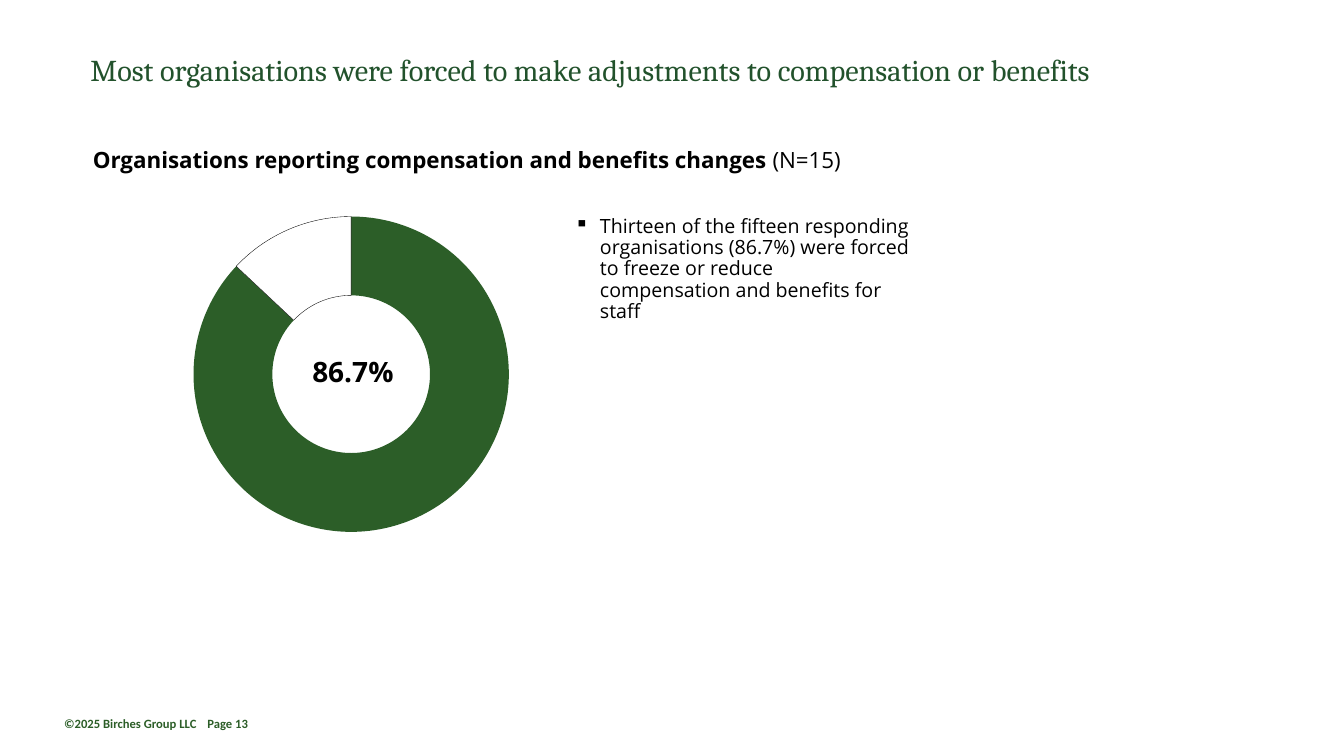
"""Build the slide on organisations that adjusted compensation or benefits."""
from lxml.etree import SubElement
from pptx import Presentation
from pptx.chart.data import CategoryChartData
from pptx.dml.color import RGBColor
from pptx.enum.chart import XL_CHART_TYPE as ChartType
from pptx.enum.text import MSO_ANCHOR as Anchor
from pptx.oxml.ns import qn
from pptx.util import Cm, Pt

GREEN, TITLE_GREEN, BLACK, WHITE = "2C5E28", "22522C", "000000", "FFFFFF"
SHARES = {"1": 87, "2": 13}
SLICES = (GREEN, WHITE)
RING = (4.65, 5.23, 8.41, 8.41)
PLOT = {"x": 0.027, "y": 0.027, "w": 0.945, "h": 0.945}
BULLET_INDENT = Cm(0.64)
PAGE_TAB = Cm(3.61)

FOOTER = {
    "at": (1.37, 17.91, 7.67, 0.64), "runs": [("©2025 Birches Group LLC\tPage 13", True)],
    "font": ("Calibri", 9, GREEN), "spacing": 1.0, "tab": PAGE_TAB,
}
TITLE = {
    "at": (2.03, 0.97, 29.21, 1.7), "font": ("Cambria", 21.6, TITLE_GREEN),
    "runs": [("Most organisations were forced to make adjustments to compensation or benefits", False)],
    "frame": {"vertical_anchor": Anchor.MIDDLE},
}
HEADING = {
    "at": (2.34, 3.76, 29.21, 0.53), "font": ("Open Sans", 16, BLACK), "margins": (0, 0, 0, 0),
    "runs": [("Organisations reporting compensation and benefits changes ", True), ("(N=15)", False)],
}
FINDING = {
    "at": (14.48, 5.46, 8.48, 4.01), "font": ("Open Sans", 14, BLACK), "margins": (0, 0, 0, 1.35),
    "runs": [("Thirteen of the fifteen responding organisations (86.7%) were forced to freeze or reduce", False),
             ("\n", False), ("compensation and benefits for staff", False)],
    "bullet": "▪",
}
SHARE_LABEL = {
    "at": (7.59, 9.04, 2.36, 0.76), "font": ("Open Sans", 20, BLACK), "margins": (0.28, 0, 0, 0),
    "runs": [("86.7%", True)], "frame": {"word_wrap": False},
}


def color(hex_code):
    return RGBColor.from_string(hex_code)


def apply(target, values):
    for name, value in values.items():
        setattr(target, name, value)


def add_text(slide, at, runs, font, margins=(0.25, 0.13, 0.25, 0.13), spacing=0.9,
             frame=None, bullet=None, tab=None):
    text_frame = slide.shapes.add_textbox(*map(Cm, at)).text_frame
    sides = ("margin_left", "margin_top", "margin_right", "margin_bottom")
    apply(text_frame, {"word_wrap": True, **dict(zip(sides, map(Cm, margins))), **(frame or {})})
    paragraph = text_frame.paragraphs[0]
    paragraph.line_spacing = spacing
    properties = paragraph._p.get_or_add_pPr()
    if bullet:
        properties.set("marL", str(BULLET_INDENT))
        properties.set("indent", str(-BULLET_INDENT))
        SubElement(properties, qn("a:buChar"), char=bullet)
    if tab:
        tabs = SubElement(properties, qn("a:tabLst"))
        SubElement(tabs, qn("a:tab"), pos=str(tab), algn="l")
    face, size, ink = font
    for words, bold in runs:
        if words == "\n":
            paragraph.add_line_break()
            SubElement(paragraph._p[-1], qn("a:rPr"), sz=str(size * 100))
            continue
        run = paragraph.add_run()
        run.text = words
        apply(run.font, {"name": face, "size": Pt(size), "bold": bold})
        run.font.color.rgb = color(ink)


def add_ring(slide):
    shares = CategoryChartData()
    shares.categories = list(SHARES)
    shares.add_series("Series 1", list(SHARES.values()))
    chart = slide.shapes.add_chart(ChartType.DOUGHNUT, *map(Cm, RING), shares).chart
    apply(chart, {"has_legend": False, "has_title": False})
    apply(chart.font, {"name": "Calibri", "size": Pt(10)})
    chart.font.color.rgb = color(BLACK)
    ring = chart.plots[0]
    apply(ring, {"vary_by_categories": True, "has_data_labels": False})
    ring._element.find(qn("c:holeSize")).set("val", "50")
    for index, fill in enumerate(SLICES):
        part = ring.series[0].points[index].format
        part.fill.solid()
        part.fill.fore_color.rgb = color(fill)
        if fill == WHITE:
            part.line.color.rgb = color(BLACK)
            part.line.width = Pt(0.25)
        else:
            part.line.fill.background()
    area = chart._chartSpace.chart.plotArea
    layout = area.find(qn("c:layout"))
    if layout is None:
        layout = SubElement(area, qn("c:layout"))
        area.insert(0, layout)
    manual = SubElement(layout, qn("c:manualLayout"))
    modes = {"layoutTarget": "inner", "xMode": "edge", "yMode": "edge"}
    for tag, value in {**modes, **PLOT}.items():
        SubElement(manual, qn(f"c:{tag}"), val=str(value))


def main():
    deck = Presentation()
    apply(deck, {"slide_width": Cm(33.87), "slide_height": Cm(19.05)})
    slide = deck.slides.add_slide(deck.slide_layouts[6])
    for block in (FOOTER, TITLE, HEADING):
        add_text(slide, **block)
    add_ring(slide)
    for block in (FINDING, SHARE_LABEL):
        add_text(slide, **block)
    deck.save("out.pptx")


if __name__ == "__main__":
    main()
